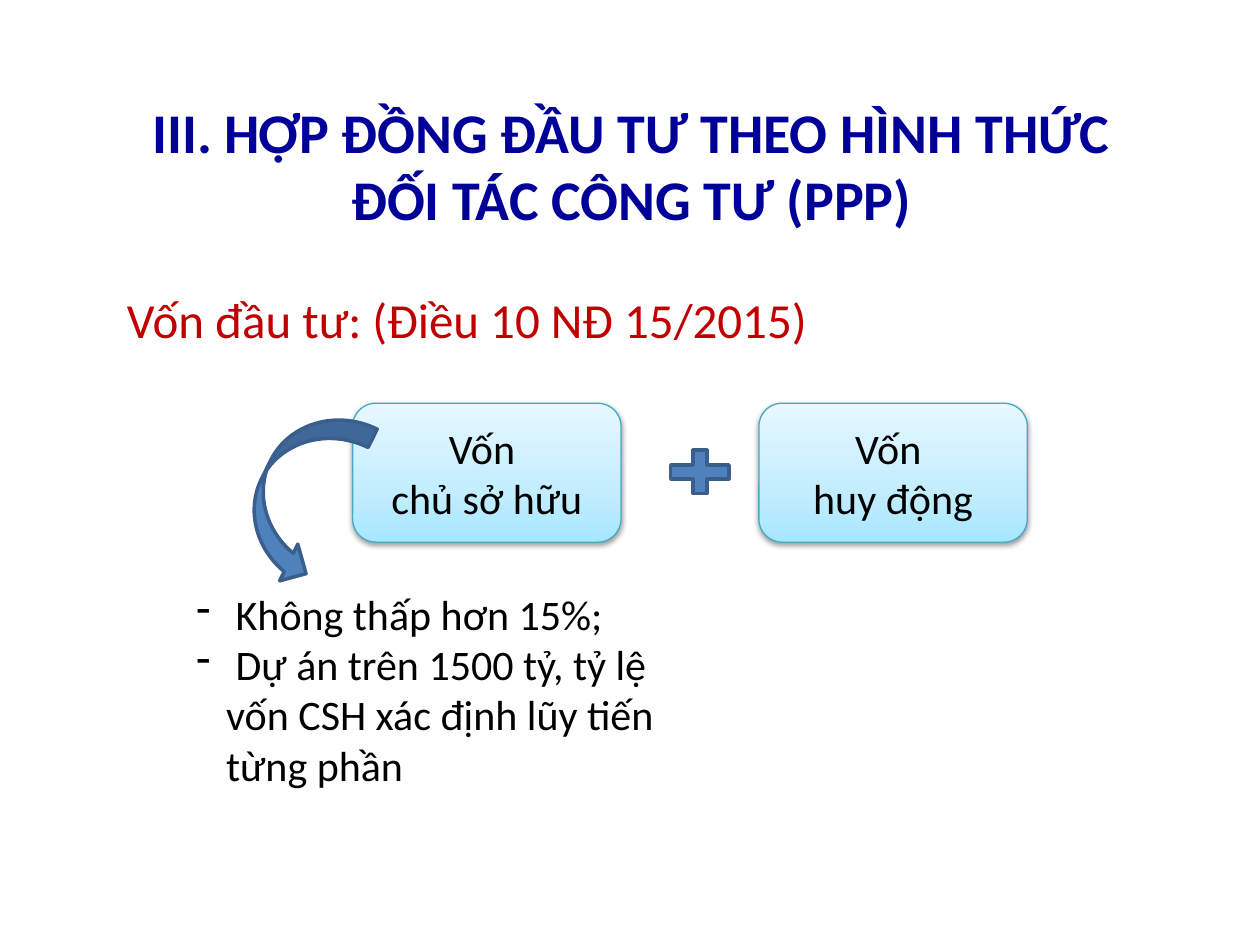
from lxml.etree import SubElement
from pptx import Presentation
from pptx.dml.color import RGBColor
from pptx.enum.shapes import MSO_SHAPE
from pptx.enum.text import MSO_ANCHOR, PP_ALIGN
from pptx.oxml import parse_xml
from pptx.oxml.ns import nsdecls, qn
from pptx.util import Cm, Pt


def color(hex_string):
    return RGBColor.from_string(hex_string)


class SlideBuilder:
    FONT = "Calibri"
    BLACK, NAVY, RED = "000000", "000099", "C00000"
    BLUE, DARK_BLUE, TEAL = "4F81BD", "3A5F8C", "46AAC5"
    GRADIENT = ((0, "A7E6FF"), (35, "C1EDFF"), (100, "E7F8FF"))

    def __init__(self, slide):
        self.slide = slide

    def set_text(self, shape, lines, size, hex_color, bold=False, align=PP_ALIGN.LEFT,
                 anchor=MSO_ANCHOR.TOP):
        frame = shape.text_frame
        frame.word_wrap = True
        frame.vertical_anchor = anchor
        frame.text = "\n".join(lines)
        for paragraph in frame.paragraphs:
            paragraph.alignment = align
            font = paragraph.font
            font.name, font.size, font.bold = self.FONT, Pt(size), bold
            font.color.rgb = color(hex_color)

    def text(self, left, top, width, height, lines, size, hex_color, **style):
        box = self.slide.shapes.add_textbox(Cm(left), Cm(top), Cm(width), Cm(height))
        self.set_text(box, lines, size, hex_color, **style)
        return box

    def dashes(self, left, top, width, height, lines):
        box = self.text(left, top, width, height, lines, 24, self.BLACK)
        for paragraph in box.text_frame.paragraphs:
            properties = paragraph._p.get_or_add_pPr()
            properties.set("marL", str(Cm(0.6)))
            properties.set("indent", str(-Cm(0.6)))
            bullet = properties.makeelement(qn("a:buChar"), {"char": "-"})
            properties.insert_element_before(bullet, "a:tabLst", "a:defRPr", "a:extLst")

    def shape(self, kind, left, top, width, height, line_color, line_width, rotation=0):
        shape = self.slide.shapes.add_shape(kind, Cm(left), Cm(top), Cm(width), Cm(height))
        shape.shadow.inherit = False
        shape.fill.solid()
        shape.fill.fore_color.rgb = color(self.BLUE)
        shape.line.color.rgb = color(line_color)
        shape.line.width = Pt(line_width)
        shape.rotation = rotation
        return shape

    def card(self, left, top, width, height, lines):
        card = self.shape(MSO_SHAPE.ROUNDED_RECTANGLE, left, top, width, height, self.TEAL, 0.75)
        properties = card._element.spPr
        # Three-stop gradient, running upwards
        stops = "".join(f'<a:gs pos="{position * 1000}"><a:srgbClr val="{value}"/></a:gs>'
                        for position, value in self.GRADIENT)
        gradient = parse_xml(f'<a:gradFill {nsdecls("a")} rotWithShape="1"><a:gsLst>{stops}'
                             '</a:gsLst><a:lin ang="16200000" scaled="0"/></a:gradFill>')
        properties.replace(properties.find(qn("a:solidFill")), gradient)
        # Soft shadow straight below
        shadow = SubElement(properties.find(qn("a:effectLst")), qn("a:outerShdw"),
                            blurRad=str(Pt(3.1)), dist=str(Pt(1.6)), dir="5400000",
                            rotWithShape="0")
        shade = SubElement(shadow, qn("a:srgbClr"), val=self.BLACK)
        SubElement(shade, qn("a:alpha"), val="38000")
        self.set_text(card, lines, 24, self.BLACK, align=PP_ALIGN.CENTER,
                      anchor=MSO_ANCHOR.MIDDLE)


def main():
    presentation = Presentation()
    presentation.slide_width, presentation.slide_height = Cm(25.4), Cm(19.05)
    builder = SlideBuilder(presentation.slides.add_slide(presentation.slide_layouts[6]))

    # Title and subject
    builder.text(1.3, 1.73, 22.86, 3.18,
                 ["III. HỢP ĐỒNG ĐẦU TƯ THEO HÌNH THỨC\vĐỐI TÁC CÔNG TƯ (PPP)"],
                 32, builder.NAVY, bold=True, align=PP_ALIGN.CENTER, anchor=MSO_ANCHOR.MIDDLE)
    builder.text(2.31, 5.72, 22, 1.45, ["Vốn đầu tư: (Điều 10 NĐ 15/2015)"], 28, builder.RED)

    # Conditions on the owner's capital
    builder.dashes(3.71, 11.73, 10, 4.37,
                   [" Không thấp hơn 15%;",
                    " Dự án trên 1500 tỷ, tỷ lệ vốn CSH xác định lũy tiến từng phần"])

    # The two sources of capital
    for left, source in ((7.11, "chủ sở hữu"), (15.3, "huy động")):
        builder.card(left, 8.13, 5.41, 2.8, ["Vốn ", source])

    # Arrow to the conditions, plus sign between the sources
    builder.shape(MSO_SHAPE.CURVED_RIGHT_ARROW, 5.23, 8.1, 1.65, 3.66,
                  builder.DARK_BLUE, 2, rotation=26.2)
    builder.shape(MSO_SHAPE.MATH_PLUS, 13.31, 8.92, 1.6, 1.19, builder.DARK_BLUE, 2)

    presentation.save("out.pptx")


if __name__ == "__main__":
    main()
